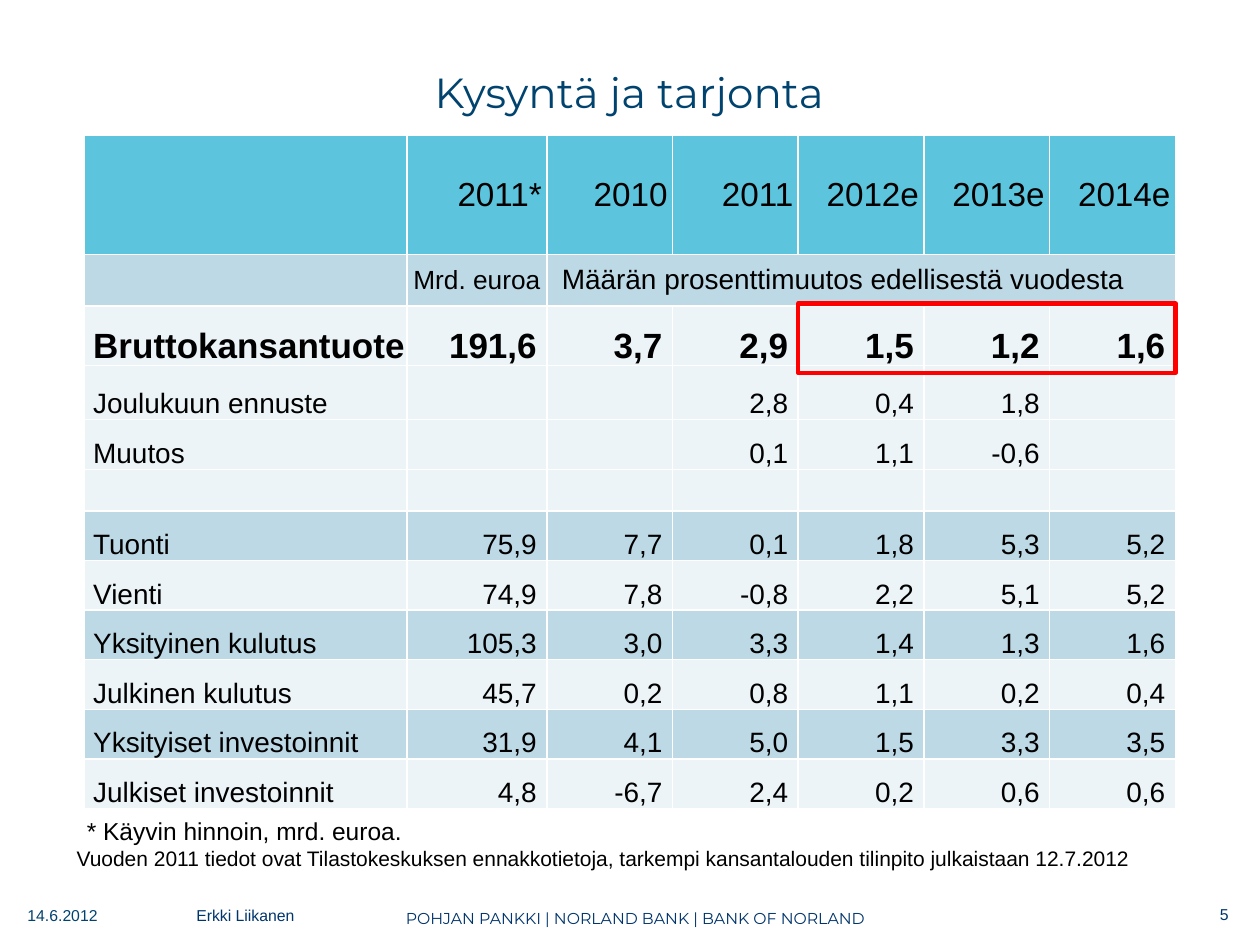
"""Builds the supply and demand forecast slide on a grid of 100 columns by 75 rows."""
import pptx
import pptx.dml.color
import pptx.enum.shapes
import pptx.enum.text
import pptx.oxml
import pptx.oxml.ns
import pptx.util

UNIT = pptx.util.Inches(0.1)
SLIDE_COLUMNS, SLIDE_ROWS = 100, 75
COLORS = {
    "header": "5CC4DC", "band": "BDD9E5", "pale": "ECF4F8", "grid": "FFFFFF",
    "text": "000000", "title": "00436F", "footer": "00356C", "highlight": "FF0000",
}
LEFT, CENTER, RIGHT = (pptx.enum.text.PP_ALIGN.LEFT, pptx.enum.text.PP_ALIGN.CENTER,
                       pptx.enum.text.PP_ALIGN.RIGHT)
TOP, MIDDLE, BOTTOM = (pptx.enum.text.MSO_ANCHOR.TOP, pptx.enum.text.MSO_ANCHOR.MIDDLE,
                       pptx.enum.text.MSO_ANCHOR.BOTTOM)

COLUMN_WIDTHS = [25.6, 11.1] + [9.98] * 5
ROW_HEIGHTS = [9.5, 4.1, 4.7, 4.3, 3.95, 3.3] + [3.94] * 6
GDP_ROW = 2
FIRST_FORECAST = 4
BANDED_ROWS = {1, 6, 8, 10}
FORECAST = [
    ["", "2011*", "2010", "2011", "2012e", "2013e", "2014e"],
    ["", "Mrd. euroa", "Määrän prosenttimuutos edellisestä vuodesta", "", "", "", ""],
    ["Bruttokansantuote", "191,6", "3,7", "2,9", "1,5", "1,2", "1,6"],
    ["Joulukuun ennuste", "", "", "2,8", "0,4", "1,8", ""],
    ["Muutos", "", "", "0,1", "1,1", "-0,6", ""],
    [""] * 7,
    ["Tuonti", "75,9", "7,7", "0,1", "1,8", "5,3", "5,2"],
    ["Vienti", "74,9", "7,8", "-0,8", "2,2", "5,1", "5,2"],
    ["Yksityinen kulutus", "105,3", "3,0", "3,3", "1,4", "1,3", "1,6"],
    ["Julkinen kulutus", "45,7", "0,2", "0,8", "1,1", "0,2", "0,4"],
    ["Yksityiset investoinnit", "31,9", "4,1", "5,0", "1,5", "3,3", "3,5"],
    ["Julkiset investoinnit", "4,8", "-6,7", "2,4", "0,2", "0,6", "0,6"],
]


def units(*lengths):
    """Turn grid lengths into slide lengths."""
    return [round(length * UNIT) for length in lengths]


def rgb(name):
    """Look up a named colour."""
    return pptx.dml.color.RGBColor.from_string(COLORS[name])


def write(paragraph, words, size, color="text", font="Arial", align=LEFT, bold=False):
    """Fill a paragraph with one formatted run."""
    paragraph.alignment = align
    run = paragraph.add_run()
    run.text = words
    values = {"size": pptx.util.Pt(size), "name": font, "bold": bold}
    for key, value in values.items():
        setattr(run.font, key, value)
    run.font.color.rgb = rgb(color)


def add_label(slide, box, words, size, anchor=TOP, wrap=True, **style):
    """Place one line of text in a box."""
    frame = slide.shapes.add_textbox(*units(*box)).text_frame
    frame.word_wrap = wrap
    frame.vertical_anchor = anchor
    write(frame.paragraphs[0], words, size, **style)


def add_borders(cell):
    """Draw white edges round a cell."""
    namespace = pptx.oxml.ns.nsdecls("a")
    for edge in ("lnL", "lnR", "lnT", "lnB"):
        cell._tc.get_or_add_tcPr().append(pptx.oxml.parse_xml(
            f'<a:{edge} {namespace} w="{pptx.util.Pt(1)}"><a:solidFill>'
            f'<a:srgbClr val="{COLORS["grid"]}"/></a:solidFill></a:{edge}>'))


def cell_style(row, column):
    """Return fill, anchor, side margins and text style for a table cell."""
    if row == 0:
        return "header", MIDDLE, (0, 0.4), {"size": 19, "align": RIGHT}
    if row == 1:
        unit_column = column == 1
        return ("band", MIDDLE, (0 if unit_column else 1.2, 0),
                {"size": 15 if unit_column else 16, "align": CENTER if unit_column else LEFT})
    fill = "band" if row in BANDED_ROWS else "pale"
    style = {"size": 20 if row == GDP_ROW else 16, "bold": row == GDP_ROW,
             "align": RIGHT if column else LEFT}
    return fill, BOTTOM, (0, 0.8) if column else (0.7, 0), style


def add_forecast_table(slide, left, top):
    """Place the forecast table and frame its GDP forecasts."""
    table = slide.shapes.add_table(
        len(ROW_HEIGHTS), len(COLUMN_WIDTHS),
        *units(left, top, sum(COLUMN_WIDTHS), sum(ROW_HEIGHTS))).table
    for column, width in zip(table.columns, units(*COLUMN_WIDTHS)):
        column.width = width
    for row, height in zip(table.rows, units(*ROW_HEIGHTS)):
        row.height = height
    for row, entries in enumerate(FORECAST):
        for column, words in enumerate(entries):
            cell = table.cell(row, column)
            fill, anchor, (inset_left, inset_right), style = cell_style(row, column)
            values = {"vertical_anchor": anchor, "margin_top": 0, "margin_bottom": 0,
                      "margin_left": units(inset_left)[0], "margin_right": units(inset_right)[0]}
            for key, value in values.items():
                setattr(cell, key, value)
            add_borders(cell)
            cell.fill.solid()
            cell.fill.fore_color.rgb = rgb(fill)
            if words:
                write(cell.text_frame.paragraphs[0], words, **style)
    table.cell(1, 2).merge(table.cell(1, len(COLUMN_WIDTHS) - 1))

    frame = slide.shapes.add_shape(
        pptx.enum.shapes.MSO_SHAPE.RECTANGLE,
        *units(left + sum(COLUMN_WIDTHS[:FIRST_FORECAST]), top + sum(ROW_HEIGHTS[:GDP_ROW]) - 0.2,
               sum(COLUMN_WIDTHS[FIRST_FORECAST:]), ROW_HEIGHTS[GDP_ROW] + 0.8))
    frame.shadow.inherit = False
    frame.fill.background()
    frame.line.color.rgb = rgb("highlight")
    frame.line.width = pptx.util.Pt(2.5)


def add_notes_below(slide, left, top):
    """Place the two explanations under the table."""
    add_label(slide, (left + 0.8, top, 27.2, 3.4), "* Käyvin hinnoin, mrd. euroa.", 14, wrap=False)
    add_label(slide, (left, top + 2.3, 91.3, 3),
              "Vuoden 2011 tiedot ovat Tilastokeskuksen ennakkotietoja, "
              "tarkempi kansantalouden tilinpito julkaistaan 12.7.2012", 12)


def add_footer(slide, top):
    """Place date, speaker, bank and page number along the foot."""
    add_label(slide, (1.2, top, 12.6, 3.6), "14.6.2012", 9, color="title")
    add_label(slide, (14.6, top, 15.7, 3.6), "Erkki Liikanen", 9, color="footer")
    add_label(slide, (5.8, top + 0.2, 89.2, 2.8), "POHJAN PANKKI | NORLAND BANK | BANK OF NORLAND",
              9, color="footer", font="Montserrat", align=CENTER)
    add_label(slide, (87.8, top - 0.1, 10.7, 3.2), "5", 9, color="footer", align=RIGHT)


def main():
    """Build and save the slide."""
    deck = pptx.Presentation()
    deck.slide_width, deck.slide_height = units(SLIDE_COLUMNS, SLIDE_ROWS)
    slide = deck.slides.add_slide(deck.slide_layouts[6])
    add_label(slide, (5.8, 3, 88.3, 8.5), "Kysyntä ja tarjonta", 24, anchor=MIDDLE,
              color="title", font="Montserrat", align=CENTER)
    add_forecast_table(slide, 6.7, 10.7)
    add_notes_below(slide, 5.1, 64.3)
    add_footer(slide, 71.4)
    deck.save("out.pptx")


if __name__ == "__main__":
    main()
